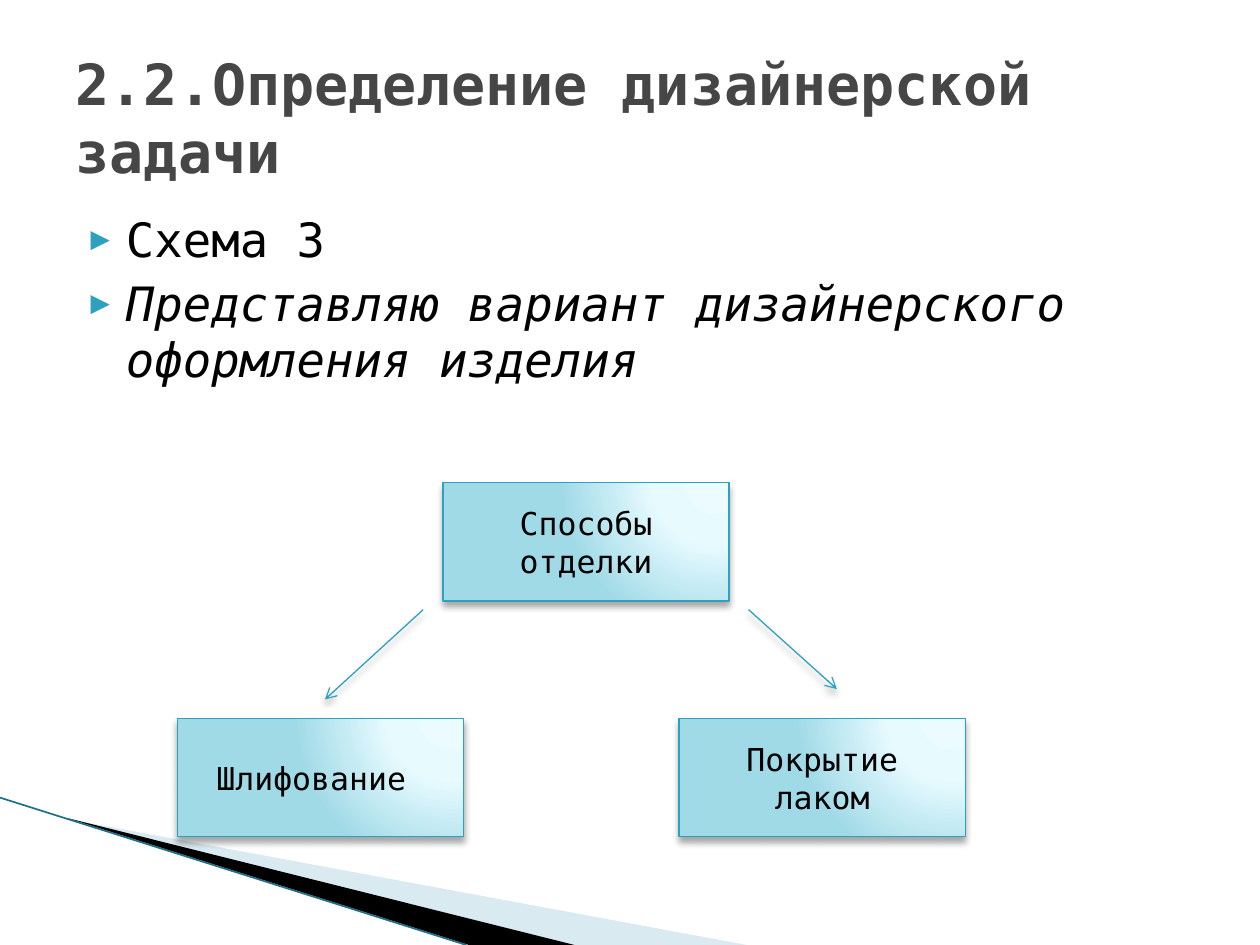
from dataclasses import dataclass

from lxml import etree
from pptx import Presentation
from pptx.dml.color import RGBColor
from pptx.enum.shapes import MSO_CONNECTOR, MSO_SHAPE
from pptx.enum.text import MSO_ANCHOR, MSO_AUTO_SIZE, PP_ALIGN
from pptx.oxml import parse_xml
from pptx.oxml.ns import nsdecls, qn
from pptx.util import Cm, Pt

RECTANGLE = MSO_SHAPE.RECTANGLE
STRAIGHT = MSO_CONNECTOR.STRAIGHT
MIDDLE = MSO_ANCHOR.MIDDLE
LEFT, CENTER = PP_ALIGN.LEFT, PP_ALIGN.CENTER
NO_FIT = MSO_AUTO_SIZE.NONE


@dataclass(frozen=True)
class Theme:
    font: str = "DejaVu Sans Mono"
    title_size: float = 32.4
    body_size: float = 27
    box_size: float = 18
    title: str = "464646"
    text: str = "000000"
    accent: str = "2DA2BF"
    wedge: str = "A0CBDC"
    edge: str = "1C7088"
    glow: tuple = ((0, "EBFBFF"), (40, "E7FBFF"), (100, "A1DAE7"))


THEME = Theme()
BOX_WIDTH, BOX_HEIGHT = 5.77, 2.39


def color(value):
    return RGBColor.from_string(value)


def style_text(para, size, value, bold=False, italic=False):
    for span in para.runs:
        span.font.name = THEME.font
        span.font.size = Pt(size)
        span.font.bold = bold
        span.font.italic = italic
        span.font.color.rgb = color(value)


def style_line(line, value, width):
    line.color.rgb = color(value)
    line.width = Pt(width)


def add_effects(shape, shadow=True):
    """Give the shape a soft shadow below it, or an empty effect list."""
    inner = (
        '<a:outerShdw blurRad="50800" dist="38100" dir="5400000" rotWithShape="0">'
        '<a:srgbClr val="000000"><a:alpha val="35000"/></a:srgbClr></a:outerShdw>'
    ) if shadow else ""
    shape._element.spPr.append(
        parse_xml(f'<a:effectLst {nsdecls("a")}>{inner}</a:effectLst>'))


def add_wedge(page, points, value, opacity=100):
    corners = [(Cm(x), Cm(y)) for x, y in points]
    builder = page.shapes.build_freeform(*corners[0], scale=1.0)
    builder.add_line_segments(corners[1:], close=True)
    wedge = builder.convert_to_shape()
    wedge.shadow.inherit = False
    wedge.fill.solid()
    wedge.fill.fore_color.rgb = color(value)
    wedge.line.fill.background()
    if opacity < 100:
        tint = wedge._element.spPr.find(".//" + qn("a:srgbClr"))
        etree.SubElement(tint, qn("a:alpha")).set("val", str(opacity * 1000))


def add_line(page, start, end, value, width, arrow=False):
    line = page.shapes.add_connector(
        STRAIGHT, *(Cm(length) for length in (*start, *end)))
    style_line(line.line, value, width)
    if arrow:
        etree.SubElement(line.line._get_or_add_ln(), qn("a:tailEnd")).set("type", "arrow")
    add_effects(line, shadow=arrow)


def add_title(page, text):
    title = page.shapes.title
    title.left, title.top, title.width, title.height = Cm(1.27), Cm(0.76), Cm(22.86), Cm(3.18)
    frame = title.text_frame
    frame.text = text
    frame.word_wrap = True
    frame.auto_size = NO_FIT
    frame.vertical_anchor = MIDDLE
    frame.paragraphs[0].alignment = LEFT
    style_text(frame.paragraphs[0], THEME.title_size, THEME.title, bold=True)


def add_bullet(para):
    properties = para._p.get_or_add_pPr()
    properties.set("marL", str(Cm(1.02)))
    properties.set("indent", str(Cm(-0.71)))
    tint = etree.SubElement(properties, qn("a:buClr"))
    etree.SubElement(tint, qn("a:srgbClr")).set("val", THEME.accent)
    etree.SubElement(properties, qn("a:buSzPct")).set("val", "68000")
    etree.SubElement(properties, qn("a:buFont")).set("typeface", THEME.font)
    etree.SubElement(properties, qn("a:buChar")).set("char", "▶")


def add_bullets(page, items):
    frame = page.shapes.add_textbox(Cm(1.27), Cm(4.11), Cm(22.86), Cm(12.57)).text_frame
    frame.word_wrap = True
    for index, (text, italic) in enumerate(items):
        para = frame.add_paragraph() if index else frame.paragraphs[0]
        para.text = text
        add_bullet(para)
        if index:
            para.space_before = Pt(4)
        style_text(para, THEME.body_size, THEME.text, italic=italic)


def fill_with_glow(shape):
    """Replace the fill by a round glow centred off the upper right."""
    stops = "".join(
        f'<a:gs pos="{place * 1000}"><a:srgbClr val="{value}"/></a:gs>'
        for place, value in THEME.glow)
    shape.fill.background()
    properties = shape._element.spPr
    properties.replace(properties.find(qn("a:noFill")), parse_xml(
        f'<a:gradFill {nsdecls("a")} rotWithShape="1"><a:gsLst>{stops}</a:gsLst>'
        '<a:path path="circle"><a:fillToRect l="95000" t="-106000" r="5000" b="206000"/>'
        '</a:path></a:gradFill>'))


def add_box(page, text, left, top):
    box = page.shapes.add_shape(RECTANGLE, Cm(left), Cm(top), Cm(BOX_WIDTH), Cm(BOX_HEIGHT))
    fill_with_glow(box)
    style_line(box.line, THEME.accent, 0.75)
    add_effects(box)
    frame = box.text_frame
    frame.text = text
    frame.word_wrap = True
    frame.vertical_anchor = MIDDLE
    frame.paragraphs[0].alignment = CENTER
    style_text(frame.paragraphs[0], THEME.box_size, THEME.text)


def main():
    deck = Presentation()
    deck.slide_width, deck.slide_height = Cm(25.4), Cm(19.05)
    page = deck.slides.add_slide(deck.slide_layouts[5])

    # Corner decoration
    add_wedge(page, [(1.4, 16.52), (15.05, 19.05), (11.58, 19.05)], THEME.wedge, opacity=40)
    add_wedge(page, [(1.35, 16.49), (11.58, 19.05), (9.45, 19.05)], THEME.text)
    add_line(page, (0, 16.08), (9.4, 19.05), THEME.edge, 0.95)

    # Heading and bullets
    add_title(page, "2.2.Определение дизайнерской задачи")
    add_bullets(page, [
        ("Схема 3", False),
        ("Представляю вариант дизайнерского оформления изделия", True),
    ])

    # Diagram of finishing methods
    add_box(page, "Шлифование ", 3.58, 14.48)
    add_box(page, "Покрытие лаком", 13.69, 14.48)
    add_box(page, "Способы отделки", 8.93, 9.73)
    add_line(page, (8.53, 12.29), (6.55, 14.1), THEME.accent, 0.75, arrow=True)
    add_line(page, (15.09, 12.29), (16.87, 13.89), THEME.accent, 0.75, arrow=True)

    deck.save("out.pptx")


if __name__ == "__main__":
    main()
